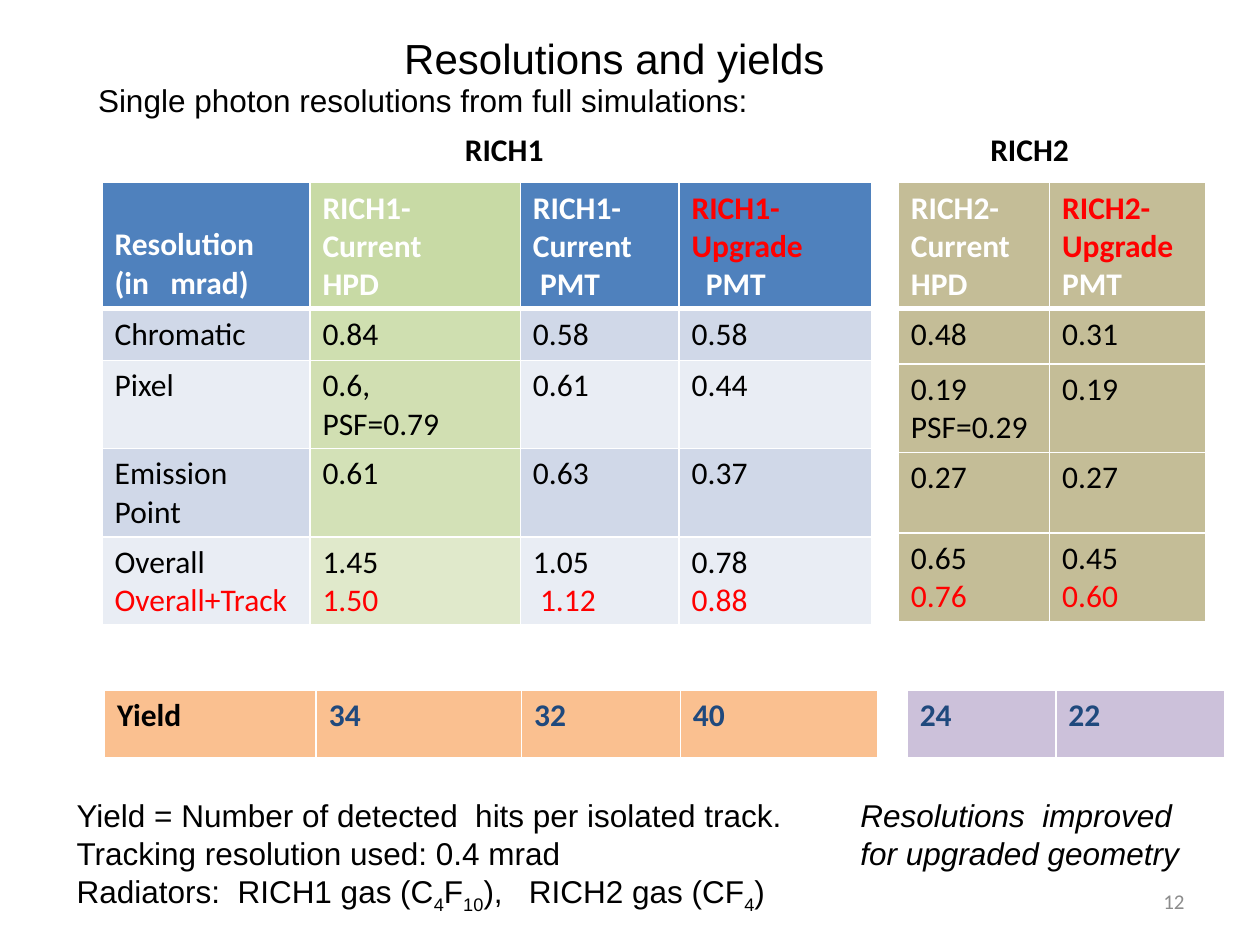
from lxml.etree import SubElement
from pptx import Presentation
from pptx.dml.color import RGBColor
from pptx.enum.text import MSO_ANCHOR, PP_ALIGN
from pptx.oxml.ns import qn
from pptx.util import Inches, Pt

BLACK = RGBColor(0x00, 0x00, 0x00)
WHITE = RGBColor(0xFF, 0xFF, 0xFF)
RED = RGBColor(0xFF, 0x00, 0x00)
GREY = RGBColor(0x8C, 0x8C, 0x8C)
BLUE = RGBColor(0x4F, 0x81, 0xBD)
BAND_DARK = RGBColor(0xD0, 0xD8, 0xE8)
BAND_LIGHT = RGBColor(0xE9, 0xED, 0xF4)
GREEN = RGBColor(0x9B, 0xBB, 0x59)
TAN = RGBColor(0xC4, 0xBD, 0x97)
ORANGE = RGBColor(0xFA, 0xC0, 0x90)
PURPLE = RGBColor(0xCC, 0xC1, 0xDA)
NAVY = RGBColor(0x1F, 0x49, 0x7D)

GREEN_OPACITY = [54, 47, 46, 43, 31]  # percent, one for each row


def red(text):
    return (text, RED)


# Each cell is a list of lines; a line is plain text or (text, colour)
RICH1_ROWS = [
    [["Resolution", "(in   mrad)"], ["RICH1-", "Current", "HPD"],
     ["RICH1-", "Current", " PMT"], [red("RICH1-Upgrade"), "  PMT"]],
    [["Chromatic"], ["0.84"], ["0.58"], ["0.58"]],
    [["Pixel"], ["0.6,", "PSF=0.79"], ["0.61"], ["0.44"]],
    [["Emission", "Point"], ["0.61"], ["0.63"], ["0.37"]],
    [["Overall", red("Overall+Track")], ["1.45", red("1.50")],
     ["1.05", red(" 1.12")], ["0.78", red("0.88")]],
]
RICH2_ROWS = [
    [["RICH2-", "Current", "HPD"], [red("RICH2-"), red("Upgrade"), "PMT"]],
    [["0.48"], ["0.31"]],
    [["0.19", "PSF=0.29"], ["0.19"]],
    [["0.27"], ["0.27"]],
    [["0.65", red("0.76")], ["0.45", red("0.60")]],
]


def add_text(page, box, lines, size=18, font="Arial", color=BLACK,
             italic=False, align=PP_ALIGN.LEFT, wrap=False):
    """Text box; a line given as a list alternates normal and subscript."""
    frame = page.shapes.add_textbox(*map(Inches, box)).text_frame
    frame.word_wrap = wrap
    for number, line in enumerate(lines):
        para = frame.add_paragraph() if number else frame.paragraphs[0]
        para.alignment = align
        para.font.name, para.font.size = font, Pt(size)
        para.font.italic, para.font.color.rgb = italic, color
        for index, text in enumerate([line] if isinstance(line, str) else line):
            span = para.add_run()
            span.text = text
            if index % 2:
                span._r.get_or_add_rPr().set("baseline", "-25000")
    return frame


def set_borders(cell, top, bottom):
    properties = cell._tc.get_or_add_tcPr()
    for tag, width in (("lnL", 1), ("lnR", 1), ("lnT", top), ("lnB", bottom)):
        line = SubElement(properties, qn(f"a:{tag}"), w=str(Pt(width)))
        fill = SubElement(line, qn("a:solidFill"))
        SubElement(fill, qn("a:srgbClr"), val=str(WHITE))


def set_fill(cell, color, opacity=100):
    cell.fill.solid()
    cell.fill.fore_color.rgb = color
    if opacity < 100:
        tint = cell._tc.tcPr.find(qn("a:solidFill")).find(qn("a:srgbClr"))
        SubElement(tint, qn("a:alpha"), val=str(opacity * 1000))


def fill_cell(cell, lines, color, bold):
    for number, line in enumerate(lines):
        text, line_color = line if isinstance(line, tuple) else (line, color)
        frame = cell.text_frame
        para = frame.add_paragraph() if number else frame.paragraphs[0]
        para.text = text
        para.font.name, para.font.size = "Calibri", Pt(18)
        para.font.bold, para.font.color.rgb = bold, line_color


def add_grid(page, left, top, widths, heights, rows, fill_of, head_color):
    """Table with a bold first row, set off by a thick white rule."""
    table = page.shapes.add_table(
        len(rows), len(widths), Inches(left), Inches(top),
        Inches(sum(widths)), Inches(sum(heights))).table
    table.horz_banding = False
    for column, width in zip(table.columns, widths):
        column.width = Inches(width)
    for r, row in enumerate(rows):
        table.rows[r].height = Inches(heights[r])
        for c, lines in enumerate(row):
            cell = table.cell(r, c)
            set_borders(cell, 3 if r == 1 else 1, 3 if r == 0 else 1)
            set_fill(cell, *fill_of(r, c))
            fill_cell(cell, lines, BLACK if r else head_color, r == 0)
    return table


def rich1_fill(row, column):
    if column == 1:
        return GREEN, GREEN_OPACITY[row]
    if row == 0:
        return (BLUE,)
    return (BAND_DARK if row % 2 else BAND_LIGHT,)


def add_heading(page):
    add_text(page, (3.11, 0.21, 3.57, 0.5), ["Resolutions and yields"], size=24)
    add_text(page, (0.68, 0.59, 5.43, 0.4),
             ["Single photon resolutions from full simulations:"])


def add_detector_names(page, left, top):
    names = add_grid(page, left, top, [6.14, 2.6], [0.41],
                     [[["RICH1"], ["RICH2"]]], lambda r, c: (WHITE,), BLACK)
    for column, indent in enumerate((2.86, 0.89)):
        names.cell(0, column).margin_left = Inches(indent)


def add_resolutions(page, top):
    rich1 = add_grid(page, 0.81, top, [1.65, 1.67, 1.26, 1.53],
                     [0.99, 0.41, 0.7, 0.7, 0.7], RICH1_ROWS, rich1_fill, WHITE)
    rich1.cell(0, 0).vertical_anchor = MSO_ANCHOR.BOTTOM
    add_grid(page, 7.13, top, [1.2, 1.24], [0.99, 0.44, 0.7, 0.64, 0.7],
             RICH2_ROWS, lambda r, c: (TAN,), WHITE)


def add_yields(page, top):
    rich1 = [["Yield"], ["34"], ["32"], ["40"]]
    rich1[1:] = [[(text, NAVY)] for (text,) in rich1[1:]]
    add_grid(page, 0.83, top, [1.68, 1.63, 1.26, 1.57], [0.55], [rich1],
             lambda r, c: (ORANGE,), BLACK)
    add_grid(page, 7.2, top, [1.18, 1.34], [0.55], [[["24"], ["22"]]],
             lambda r, c: (PURPLE,), NAVY)


def add_notes_below(page, top):
    add_text(page, (0.51, top, 5.99, 1.01), [
        "Yield = Number of detected  hits per isolated track.",
        "Tracking resolution used: 0.4 mrad",
        ["Radiators:  RICH1 gas (C", "4", "F", "10",
         "),   RICH2 gas (CF", "4", ")"],
    ])
    add_text(page, (6.73, top, 2.75, 0.71),
             ["Resolutions  improved", "for upgraded geometry"], italic=True)


def add_page_number(page, box):
    frame = add_text(page, box, ["12"], size=12, font="Calibri", color=GREY,
                     align=PP_ALIGN.RIGHT, wrap=True)
    frame.vertical_anchor = MSO_ANCHOR.MIDDLE


def main():
    deck = Presentation()
    deck.slide_width, deck.slide_height = Inches(10), Inches(7.5)
    page = deck.slides.add_slide(deck.slide_layouts[6])
    add_detector_names(page, 0.83, 0.99)
    add_heading(page)
    add_resolutions(page, 1.45)
    add_yields(page, 5.48)
    add_notes_below(page, 6.27)
    add_page_number(page, (7.17, 6.95, 2.33, 0.4))
    deck.save("out.pptx")


if __name__ == "__main__":
    main()
